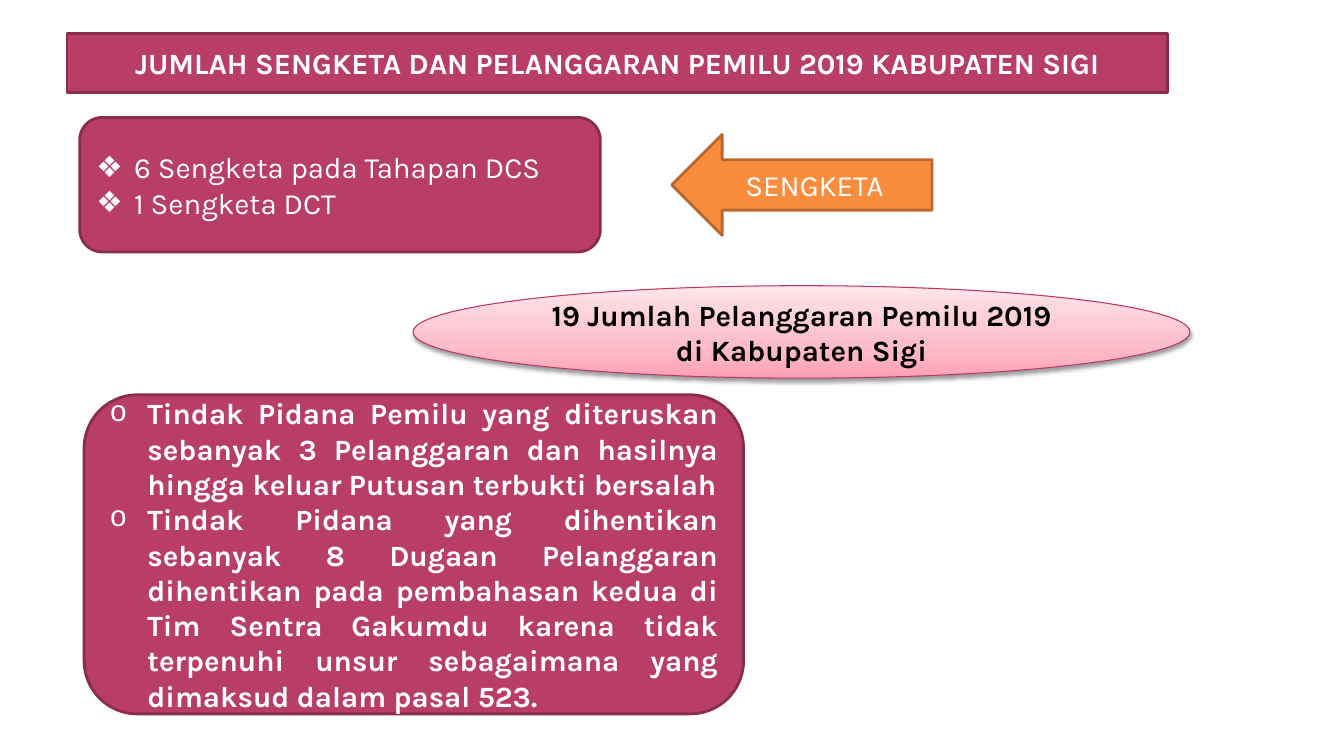
from copy import deepcopy
from dataclasses import dataclass

from lxml import etree
from pptx import Presentation
from pptx.dml.color import RGBColor as Rgb
from pptx.enum import shapes, text
from pptx.oxml.ns import qn
from pptx.util import Cm, Pt

TITLE = "JUMLAH SENGKETA DAN PELANGGARAN PEMILU 2019 KABUPATEN SIGI"
CASES = ["6 Sengketa pada Tahapan DCS", "1 Sengketa DCT"]
CRIMES = [
    "Tindak Pidana Pemilu yang diteruskan sebanyak 3 Pelanggaran dan hasilnya "
    "hingga keluar Putusan terbukti bersalah",
    "Tindak Pidana yang dihentikan sebanyak 8 Dugaan Pelanggaran dihentikan "
    "pada pembahasan kedua di Tim Sentra Gakumdu karena tidak terpenuhi unsur "
    "sebagaimana yang dimaksud dalam pasal 523.",
]
LABEL = "SENGKETA"
TOTAL = "19 Jumlah Pelanggaran Pemilu 2019 di Kabupaten Sigi"

PLACES = {
    "title": (1.69, 0.85, 27.73, 1.48),
    "cases": (2.01, 2.96, 13.12, 3.39),
    "label": (16.93, 3.39, 6.56, 2.54),
    "total": (10.41, 7.2, 19.58, 2.33),
    "crimes": (2.12, 9.95, 16.62, 8.04),
}


@dataclass(frozen=True)
class Theme:
    font: str = "Karla"
    size: int = 21
    white: str = "FFFFFF"
    black: str = "000000"
    rose: str = "B83D68"
    wine: str = "882D4D"
    orange: str = "FA8D3D"
    brown: str = "B9682D"
    edge: str = "B73965"
    blush: tuple = ((0, "FFA0B5"), (0.35, "FDBDCB"), (1, "FFE5EB"))


THEME = Theme()


def color(code):
    return Rgb.from_string(code)


def place(shape, name):
    shape.left, shape.top, shape.width, shape.height = map(Cm, PLACES[name])


def paint(shape, fill, line, width=2):
    if fill:
        shape.fill.solid()
        shape.fill.fore_color.rgb = color(fill)
    shape.line.color.rgb = color(line)
    shape.line.width = Pt(width)


def mark(par, sign, face):
    props = par._p.get_or_add_pPr()
    props.set("marL", str(Cm(0.95)))
    props.set("indent", str(-Cm(0.95)))
    etree.SubElement(props, qn("a:buFont"), typeface=face)
    etree.SubElement(props, qn("a:buChar"), char=sign)


def write(shape, lines, ink=THEME.white, bold=False, bullet=None):
    frame = shape.text_frame
    frame.word_wrap = True
    frame.auto_size = text.MSO_AUTO_SIZE.NONE
    frame.vertical_anchor = text.MSO_ANCHOR.MIDDLE
    frame.text = "\n".join(lines)
    for par in frame.paragraphs:
        par.space_before = Pt(0)
        par.alignment = text.PP_ALIGN.JUSTIFY if bullet else text.PP_ALIGN.CENTER
        if bullet:
            mark(par, *bullet)
        font = par.font
        font.name, font.size, font.bold = THEME.font, Pt(THEME.size), bold
        font.color.rgb = color(ink)


def bend(shape):
    geom = etree.Element(qn("a:prstGeom"), prst="roundRect")
    etree.SubElement(geom, qn("a:avLst"))
    shape._element.spPr.insert(1, geom)


def shade(shape):
    shape.fill.gradient()
    shape.fill.gradient_angle = 90
    stops = shape._element.spPr.find(".//" + qn("a:gsLst"))
    stops.append(deepcopy(stops[-1]))
    for stop, (pos, code) in zip(shape.fill.gradient_stops, THEME.blush):
        stop.position = pos
        stop.color.rgb = color(code)


def drop(shape):
    glow = shape._element.spPr.find(qn("a:effectLst"))
    cast = etree.SubElement(glow, qn("a:outerShdw"), blurRad=str(Pt(3.1)),
                            dist=str(Pt(1.6)), dir="5400000", rotWithShape="0")
    tint = etree.SubElement(cast, qn("a:srgbClr"), val=THEME.black)
    etree.SubElement(tint, qn("a:alpha"), val="38000")


def add(slide, kind, name):
    shape = slide.shapes.add_shape(kind, *map(Cm, PLACES[name]))
    shape.shadow.inherit = False
    return shape


def main():
    deck = Presentation()
    deck.slide_width, deck.slide_height = Cm(33.87), Cm(19.05)
    slide = deck.slides.add_slide(deck.slide_layouts[3])
    title, cases, crimes = slide.placeholders

    place(title, "title")
    paint(title, THEME.rose, THEME.wine)
    write(title, [TITLE], bold=True)

    for box, name, lines, bold, bullet in (
        (cases, "cases", CASES, False, ("❖", "Arial")),
        (crimes, "crimes", CRIMES, True, ("o", "Courier New")),
    ):
        place(box, name)
        bend(box)
        paint(box, THEME.rose, THEME.wine)
        write(box, lines, bold=bold, bullet=bullet)

    label = add(slide, shapes.MSO_SHAPE.LEFT_ARROW, "label")
    paint(label, THEME.orange, THEME.brown)
    write(label, [LABEL])

    total = add(slide, shapes.MSO_SHAPE.OVAL, "total")
    shade(total)
    paint(total, None, THEME.edge, 0.75)
    drop(total)
    write(total, [TOTAL], THEME.black, True)

    deck.save("out.pptx")


if __name__ == "__main__":
    main()
